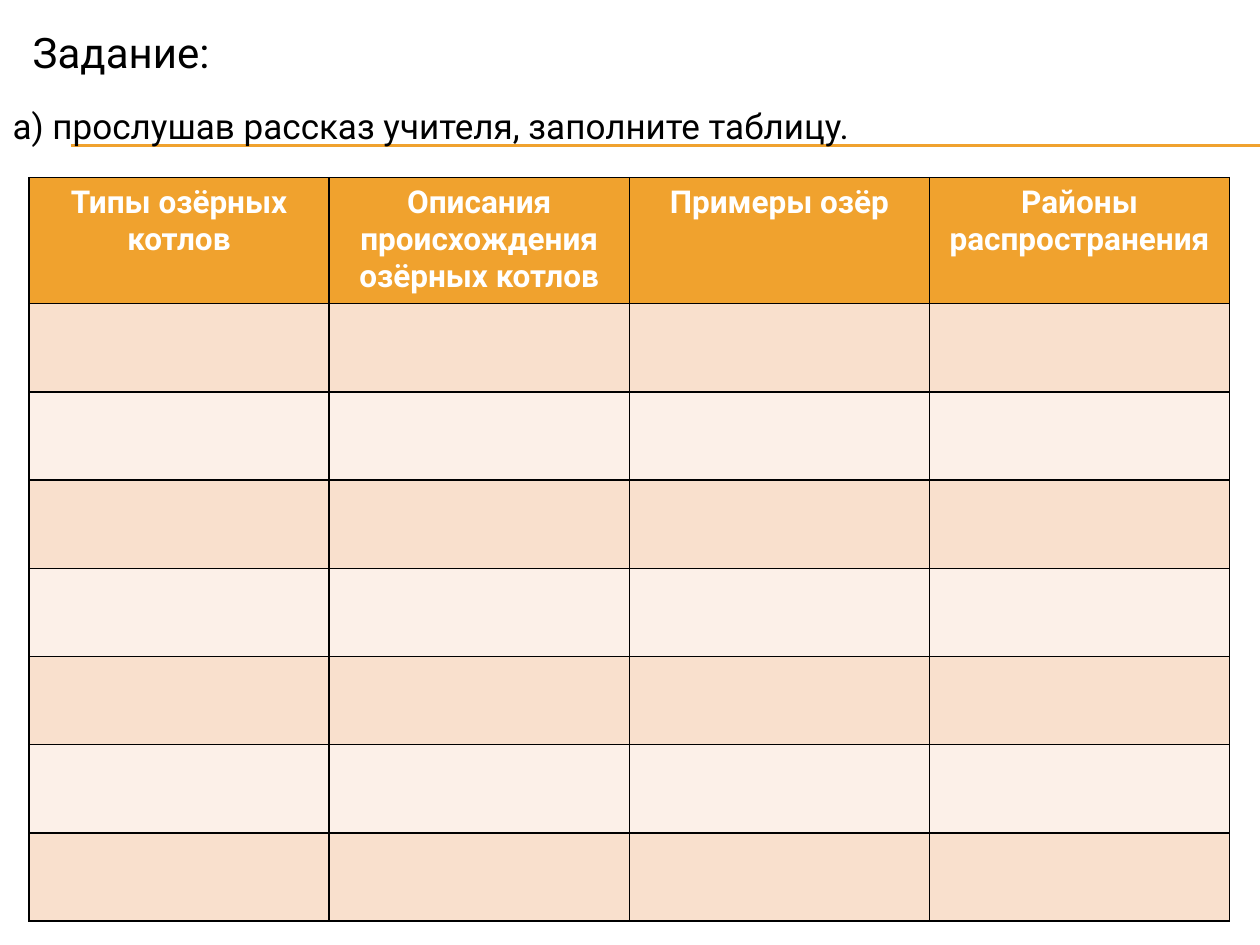
from pptx import Presentation
from pptx import util as u
from pptx.dml import color
from pptx.enum import shapes, text
from pptx.oxml import ns
from lxml import etree

BLACK, WHITE, ORANGE = "000000", "FFFFFF", "F0A22E"
BANDS = ["F9E0CD", "FCF0E8"]


def rgb(value):
    return color.RGBColor.from_string(value)


def child(parent, tag, **attributes):
    return etree.SubElement(parent, ns.qn(tag), attributes)


class LessonSlide:
    font_name = "Roboto"

    def __init__(self, slide):
        self.slide = slide

    def add_words(self, paragraph, words, size, ink, align, bold=False):
        paragraph.alignment = align
        paragraph.space_before = u.Pt(0)
        run = paragraph.add_run()
        run.text = words
        run.font.name = self.font_name
        run.font.size = u.Pt(size)
        run.font.bold = bold
        run.font.color.rgb = rgb(ink)

    def heading(self, placeholder, words, size, left, top, width, height):
        placeholder.left, placeholder.top = u.Inches(left), u.Inches(top)
        placeholder.width, placeholder.height = u.Inches(width), u.Inches(height)
        frame = placeholder.text_frame
        frame.word_wrap = True
        frame.auto_size = text.MSO_AUTO_SIZE.SHAPE_TO_FIT_TEXT
        frame.vertical_anchor = text.MSO_ANCHOR.TOP
        paragraph = frame.paragraphs[0]
        properties = paragraph._p.get_or_add_pPr()
        properties.set("marL", "0")
        properties.set("indent", "0")
        child(properties, "a:buNone")
        self.add_words(paragraph, words, size, BLACK, text.PP_ALIGN.LEFT)

    def rule(self, left, right, top):
        line = self.slide.shapes.add_connector(
            shapes.MSO_CONNECTOR.STRAIGHT,
            u.Inches(left), u.Inches(top), u.Inches(right), u.Inches(top))
        line.line.color.rgb = rgb(ORANGE)
        line.line.width = u.Pt(0.75)
        child(line.element.spPr, "a:effectLst")
        line.element.getparent().insert(2, line.element)

    def style_cell(self, cell, fill):
        properties = cell._tc.get_or_add_tcPr()
        for side in ("a:lnL", "a:lnR", "a:lnT", "a:lnB"):
            border = child(properties, side, w=str(u.Pt(1)))
            child(child(border, "a:solidFill"), "a:srgbClr", val=BLACK)
        cell.fill.solid()
        cell.fill.fore_color.rgb = rgb(fill)

    def table(self, headers, blank_rows, left, top, width, header_height, row_height):
        grid = self.slide.shapes.add_table(
            blank_rows + 1, len(headers), u.Inches(left), u.Inches(top),
            u.Inches(width), u.Inches(header_height + blank_rows * row_height)).table
        for column in grid.columns:
            column.width = u.Inches(width / len(headers))
        for index, row in enumerate(grid.rows):
            row.height = u.Inches(row_height if index else header_height)
            for cell in row.cells:
                self.style_cell(cell, BANDS[(index - 1) % 2] if index else ORANGE)
        for cell, lines in zip(grid.rows[0].cells, headers):
            frame = cell.text_frame
            for index, words in enumerate(lines):
                paragraph = frame.add_paragraph() if index else frame.paragraphs[0]
                self.add_words(paragraph, words, 18, WHITE, text.PP_ALIGN.CENTER, True)


def main():
    deck = Presentation()
    deck.slide_width, deck.slide_height = u.Inches(10), u.Inches(7.5)
    lesson = LessonSlide(deck.slides.add_slide(deck.slide_layouts[1]))
    title, task = lesson.slide.placeholders
    lesson.heading(title, "Задание:", 24, 0.16, 0.16, 7.19, 0.5)
    lesson.heading(task, "а) прослушав рассказ учителя, заполните таблицу.",
                   20, 0, 0.78, 9.61, 0.44)
    for top in (1.15, 1.16):
        lesson.rule(0.56, 10, top)
    headers = [
        ["Типы озёрных", "котлов"],
        ["Описания происхождения озёрных котлов"],
        ["Примеры озёр"],
        ["Районы распространения"],
    ]
    lesson.table(headers, 7, 0.23, 1.41, 9.53, 1, 0.7)
    deck.save("out.pptx")


if __name__ == "__main__":
    main()
